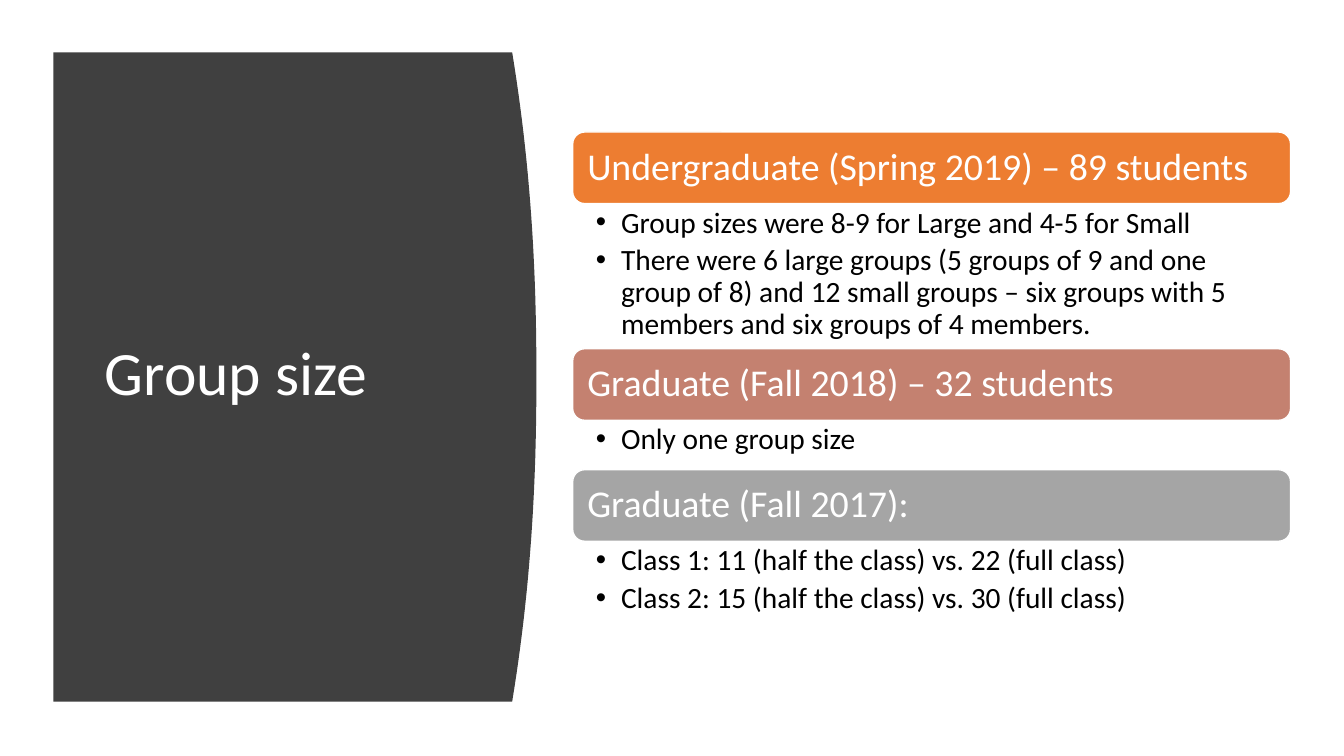
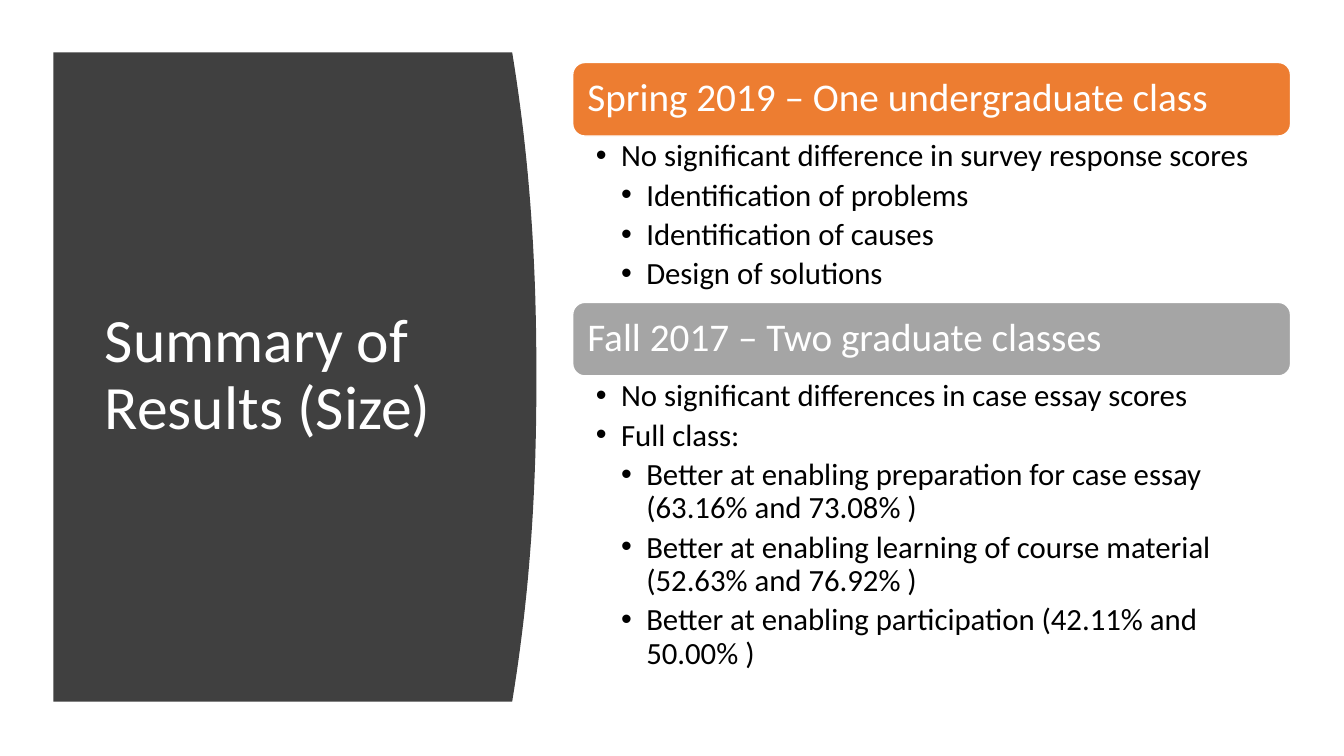
from dataclasses import dataclass

from lxml import etree
from pptx import Presentation
from pptx.dml.color import RGBColor
from pptx.enum.shapes import MSO_SHAPE
from pptx.enum.text import MSO_ANCHOR, MSO_AUTO_SIZE, PP_ALIGN
from pptx.oxml.ns import qn
from pptx.util import Inches, Pt

ROUNDED = MSO_SHAPE.ROUNDED_RECTANGLE
MIDDLE, TOP = MSO_ANCHOR.MIDDLE, MSO_ANCHOR.TOP
LEFT = PP_ALIGN.LEFT
NO_AUTOFIT = MSO_AUTO_SIZE.NONE
TITLE_ONLY = 5


@dataclass(frozen=True)
class Theme:
    font: str = "Calibri"
    title_size: int = 44
    line_spacing: float = 0.9
    bullet_gap: float = 0.2
    white: RGBColor = RGBColor(0xFF, 0xFF, 0xFF)
    black: RGBColor = RGBColor(0, 0, 0)
    panel: RGBColor = RGBColor(0x40, 0x40, 0x40)
    orange: RGBColor = RGBColor(0xED, 0x7D, 0x31)
    rose: RGBColor = RGBColor(0xC4, 0x81, 0x70)
    gray: RGBColor = RGBColor(0xA5, 0xA5, 0xA5)


@dataclass(frozen=True)
class Section:
    heading: str
    color: RGBColor
    body_height: float
    bullets: tuple


@dataclass(frozen=True)
class Content:
    title: str
    top: float
    band_height: float
    heading_size: int
    bullet_size: int
    sections: tuple


THEME = Theme()
SLIDE_WIDTH, SLIDE_HEIGHT = 13.33, 7.5
PANEL_LEFT, PANEL_TOP, PANEL_BOTTOM = 0.53, 0.52, 6.96
PANEL_EDGE, PANEL_BULGE, CURVE_POWER, CURVE_STEPS = 5.08, 0.24, 2.2, 48
TITLE_BOX = (0.94, 1.11, 3.74, 5.24)
COLUMN_LEFT, COLUMN_WIDTH = 5.68, 7.12
INDENT = 0.25

CONTENTS = (
    Content("Group size", 1.31, 0.71, 27, 21, (
        Section("Undergraduate (Spring 2019) – 89 students", THEME.orange, 1.44, (
            (1, "Group sizes were 8-9 for Large and 4-5 for Small"),
            (1, "There were 6 large groups (5 groups of 9 and one group of 8) and "
                "12 small groups – six groups with 5 members and six groups of 4 members."),
        )),
        Section("Graduate (Fall 2018) – 32 students", THEME.rose, 0.49, (
            (1, "Only one group size"),
        )),
        Section("Graduate (Fall 2017):", THEME.gray, 0.79, (
            (1, "Class 1: 11 (half the class) vs. 22 (full class)"),
            (1, "Class 2: 15 (half the class) vs. 30 (full class)"),
        )),
    )),
    Content("Summary of Results (Size)", 0.62, 0.73, 28, 22, (
        Section("Spring 2019 – One undergraduate class", THEME.orange, 1.65, (
            (1, "No significant difference in survey response scores"),
            (2, "Identification of problems"),
            (2, "Identification of causes"),
            (2, "Design of solutions"),
        )),
        Section("Fall 2017 – Two graduate classes", THEME.gray, 3.11, (
            (1, "No significant differences in case essay scores"),
            (1, "Full class:"),
            (2, "Better at enabling preparation for case essay (63.16% and 73.08% )"),
            (2, "Better at enabling learning of course material (52.63% and 76.92% )"),
            (2, "Better at enabling participation (42.11% and 50.00% )"),
        )),
    )),
)


def format_paragraph(paragraph, size, color):
    paragraph.alignment = LEFT
    paragraph.line_spacing = THEME.line_spacing
    paragraph.font.name = THEME.font
    paragraph.font.size = Pt(size)
    paragraph.font.color.rgb = color


def format_frame(frame, anchor, left, top, right, bottom):
    frame.word_wrap = True
    frame.auto_size = NO_AUTOFIT
    frame.vertical_anchor = anchor
    frame.margin_left, frame.margin_top = Inches(left), Inches(top)
    frame.margin_right, frame.margin_bottom = Inches(right), Inches(bottom)


def add_bullet(paragraph, level):
    properties = paragraph._p.get_or_add_pPr()
    properties.set("marL", str(Inches(INDENT * level)))
    properties.set("indent", str(-Inches(INDENT)))
    etree.SubElement(properties, qn("a:buFont")).set("typeface", "Arial")
    etree.SubElement(properties, qn("a:buChar")).set("char", "•")


def add_panel(slide):
    half = (PANEL_BOTTOM - PANEL_TOP) / 2
    points = []
    for step in range(CURVE_STEPS + 1):
        offset = 2 * step / CURVE_STEPS - 1
        bulge = PANEL_BULGE * (1 - abs(offset) ** CURVE_POWER)
        points.append((Inches(PANEL_EDGE + bulge), Inches(PANEL_TOP + half * (1 + offset))))
    points.append((Inches(PANEL_LEFT), Inches(PANEL_BOTTOM)))
    builder = slide.shapes.build_freeform(Inches(PANEL_LEFT), Inches(PANEL_TOP))
    builder.add_line_segments(points, close=True)
    panel = builder.convert_to_shape()
    panel.shadow.inherit = False
    panel.fill.solid()
    panel.fill.fore_color.rgb = THEME.panel
    panel.line.fill.background()
    slide.shapes._spTree.insert(2, panel._element)


def set_title(slide, text):
    title = slide.shapes.title
    title.left, title.top, title.width, title.height = map(Inches, TITLE_BOX)
    title.text_frame.text = text
    format_frame(title.text_frame, MIDDLE, 0.1, 0.05, 0.1, 0.05)
    format_paragraph(title.text_frame.paragraphs[0], THEME.title_size, THEME.white)


def add_band(slide, section, top, content):
    band = slide.shapes.add_shape(ROUNDED, Inches(COLUMN_LEFT), Inches(top),
                                  Inches(COLUMN_WIDTH), Inches(content.band_height))
    band.shadow.inherit = False
    band.fill.solid()
    band.fill.fore_color.rgb = section.color
    band.line.color.rgb = THEME.white
    band.line.width = Pt(1)
    band.text_frame.text = section.heading
    format_frame(band.text_frame, MIDDLE, 0.11, 0.1, 0.11, 0.1)
    format_paragraph(band.text_frame.paragraphs[0], content.heading_size, THEME.white)


def add_bullets(slide, section, top, size):
    box = slide.shapes.add_textbox(Inches(COLUMN_LEFT), Inches(top),
                                   Inches(COLUMN_WIDTH), Inches(section.body_height))
    frame = box.text_frame
    format_frame(frame, TOP, 0.23, 0.04, 0.21, 0.04)
    frame.text = "\n".join(text for _, text in section.bullets)
    for paragraph, (level, _) in zip(frame.paragraphs, section.bullets):
        paragraph.level = level
        add_bullet(paragraph, level)
        paragraph.space_after = Pt(size * THEME.bullet_gap)
        format_paragraph(paragraph, size, THEME.black)


def add_content_slide(presentation, content):
    slide = presentation.slides.add_slide(presentation.slide_layouts[TITLE_ONLY])
    add_panel(slide)
    set_title(slide, content.title)
    top = content.top
    for section in content.sections:
        add_band(slide, section, top, content)
        top += content.band_height
        add_bullets(slide, section, top, content.bullet_size)
        top += section.body_height


def main():
    presentation = Presentation()
    presentation.slide_width = Inches(SLIDE_WIDTH)
    presentation.slide_height = Inches(SLIDE_HEIGHT)
    for content in CONTENTS:
        add_content_slide(presentation, content)
    presentation.save("out.pptx")


if __name__ == "__main__":
    main()
